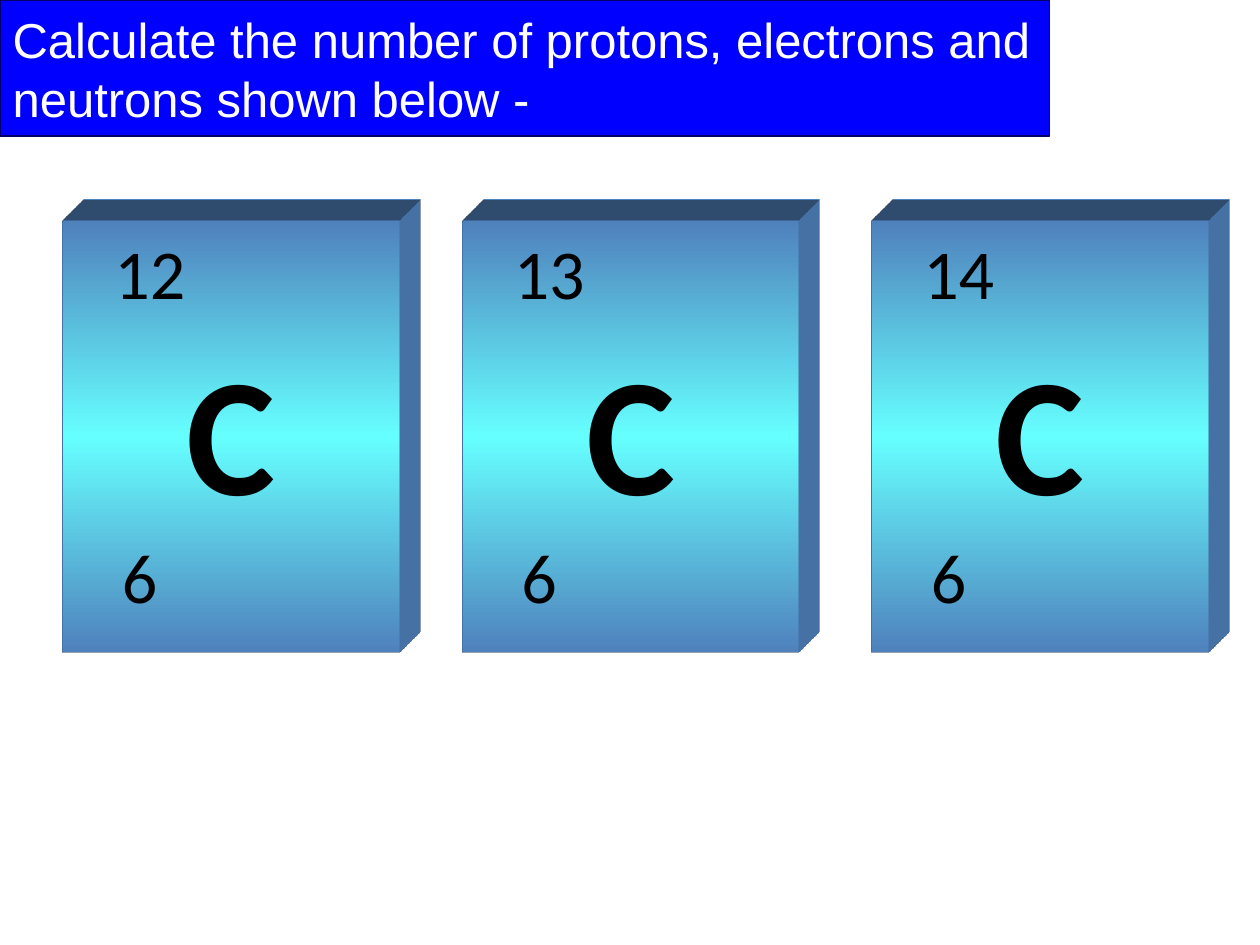
from copy import deepcopy

from pptx import Presentation
from pptx.dml.color import RGBColor
from pptx.enum.shapes import MSO_SHAPE as Shape
from pptx.enum.text import MSO_ANCHOR as Anchor, MSO_AUTO_SIZE as AutoSize, PP_ALIGN as Align
from pptx.oxml import parse_xml
from pptx.oxml.ns import nsdecls, qn
from pptx.util import Inches, Pt

BLUE = RGBColor(0x00, 0x00, 0xFF)
NAVY = RGBColor(0x00, 0x00, 0x66)
STEEL = RGBColor(0x4F, 0x81, 0xBD)
CYAN = RGBColor(0x66, 0xFF, 0xFF)
BLACK = RGBColor(0x00, 0x00, 0x00)
WHITE = RGBColor(0xFF, 0xFF, 0xFF)

ISOTOPES = [(0.5, "12"), (3.67, "13"), (6.92, "14")]
CARD_TOP, CARD_WIDTH, CARD_HEIGHT = 1.75, 2.67, 3.43


def add_span(para, text, font, size, color, bold=False):
    span = para.add_run()
    span.text = text
    span.font.name = font
    span.font.size = Pt(size)
    span.font.bold = bold
    span.font.color.rgb = color


def set_title(page, text):
    title = page.shapes.title
    title.left = title.top = 0
    title.width, title.height = Inches(8.33), Inches(1.08)
    title.fill.solid()
    title.fill.fore_color.rgb = BLUE
    title.line.color.rgb = NAVY
    title.line.width = Pt(0.75)
    frame = title.text_frame
    frame.auto_size = AutoSize.NONE
    frame.vertical_anchor = Anchor.MIDDLE
    para = frame.paragraphs[0]
    para.alignment = Align.LEFT
    add_span(para, text, "Arial", 28, WHITE)


def fill_gradient(box, stops):
    box.fill.gradient()
    box.fill.gradient_angle = 270
    stop_list = box._element.spPr.find(qn("a:gradFill")).find(qn("a:gsLst"))
    stop_list.append(deepcopy(stop_list[-1]))
    for stop, (position, color) in zip(box.fill.gradient_stops, stops):
        stop.position = position
        stop.color.rgb = color


def extrude(box, color):
    properties = box._element.spPr
    properties.append(parse_xml(
        f'<a:scene3d {nsdecls("a")}><a:camera prst="legacyObliqueTopRight"/>'
        '<a:lightRig rig="legacyFlat3" dir="b"/></a:scene3d>'))
    properties.append(parse_xml(
        f'<a:sp3d {nsdecls("a")} extrusionH="430200" prstMaterial="legacyMatte">'
        '<a:bevelT w="13500" h="13500" prst="angle"/>'
        '<a:bevelB w="13500" h="13500" prst="angle"/>'
        f'<a:extrusionClr><a:srgbClr val="{color}"/></a:extrusionClr></a:sp3d>'))


def add_line(para, text, size, indent=0, before=0, spacing=1.0, bold=False, align=Align.LEFT):
    para.alignment = align
    para.line_spacing = spacing
    para.space_before = Pt(before)
    para._p.get_or_add_pPr().set("marL", str(Inches(indent)))
    para._p.get_or_add_pPr().set("indent", "0")
    add_span(para, text, "Calibri", size, BLACK, bold)


def add_isotope(page, left, mass, symbol, number):
    box = page.shapes.add_shape(Shape.RECTANGLE, Inches(left), Inches(CARD_TOP),
                                Inches(CARD_WIDTH), Inches(CARD_HEIGHT))
    box.shadow.inherit = False
    box.line.fill.background()
    fill_gradient(box, [(0, STEEL), (0.5, CYAN), (1, STEEL)])
    extrude(box, STEEL)
    frame = box.text_frame
    frame.word_wrap = True
    frame.vertical_anchor = Anchor.TOP
    frame.margin_top = Inches(0.07)
    add_line(frame.paragraphs[0], mass, 40, indent=0.31)
    add_line(frame.add_paragraph(), symbol, 96, before=58, spacing=0.5,
             bold=True, align=Align.CENTER)
    add_line(frame.add_paragraph(), number, 40, indent=0.37, before=31, spacing=0.5)


def main():
    deck = Presentation()
    deck.slide_width, deck.slide_height = Inches(10), Inches(7.5)
    page = deck.slides.add_slide(deck.slide_layouts[5])
    set_title(page, "Calculate the number of protons, electrons and neutrons shown below -")
    for left, mass in ISOTOPES:
        add_isotope(page, left, mass, "C", "6")
    deck.save("out.pptx")


if __name__ == "__main__":
    main()
